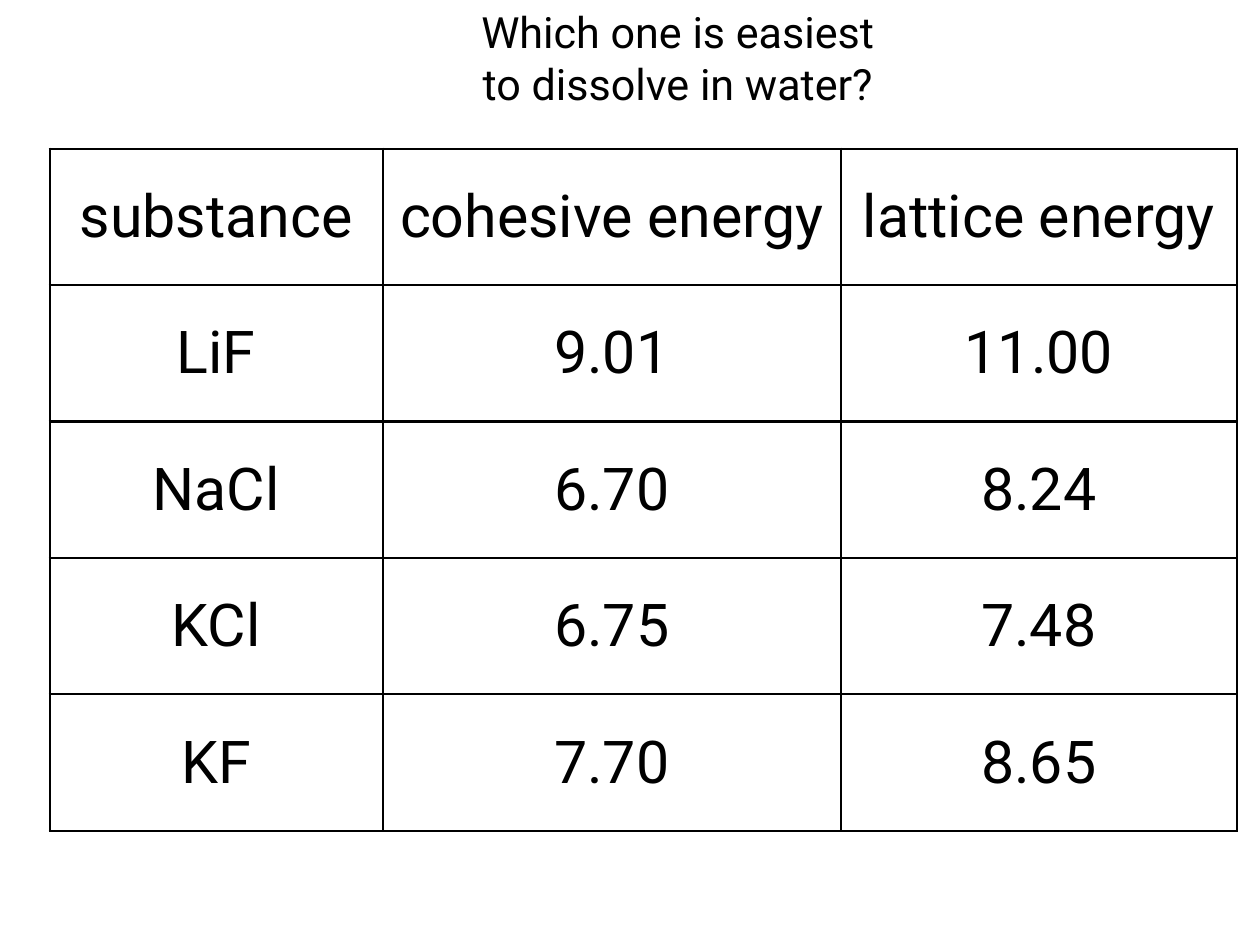
from pptx import Presentation
from pptx.dml.color import RGBColor
from pptx.enum import text
from pptx.oxml import parse_xml
from pptx.oxml.ns import nsdecls
from pptx.util import Inches, Pt

INK = "000000"
PAPER = "FFFFFF"


def color(value):
    return RGBColor.from_string(value)


def style(frame, size, spacing, inset):
    frame.word_wrap = True
    frame.margin_left = frame.margin_right = Inches(inset)
    frame.margin_top = frame.margin_bottom = Inches(inset)
    paragraph = frame.paragraphs[0]
    paragraph.alignment = text.PP_ALIGN.CENTER
    paragraph.line_spacing = Pt(spacing)
    font = paragraph.runs[0].font
    font.name = "Roboto"
    font.size = Pt(size)
    font.color.rgb = color(INK)


deck = Presentation()
deck.slide_width = Inches(14.22)
deck.slide_height = Inches(10.67)
slide = deck.slides.add_slide(deck.slide_layouts[6])
slide.background.fill.solid()
slide.background.fill.fore_color.rgb = color(PAPER)

# Energy table
energies = [
    ("substance", "cohesive energy", "lattice energy"),
    ("LiF", "9.01", "11.00"),
    ("NaCl", "6.70", "8.24"),
    ("KCl", "6.75", "7.48"),
    ("KF", "7.70", "8.65"),
]
column_widths = [3.76, 5.17, 4.47]
row_height = 1.54
energy_table = slide.shapes.add_table(
    len(energies), len(column_widths), Inches(0.56), Inches(1.68),
    Inches(sum(column_widths)), Inches(row_height * len(energies))).table
energy_table.first_row = False
energy_table.horz_banding = False
for column, width in zip(energy_table.columns, column_widths):
    column.width = Inches(width)

for r, substance in enumerate(energies):
    energy_table.rows[r].height = Inches(row_height)
    for c, value in enumerate(substance):
        cell = energy_table.cell(r, c)
        cell.text_frame.text = value
        style(cell.text_frame, 48, 57, 0.04)
        cell.vertical_anchor = text.MSO_ANCHOR.MIDDLE
        # Borders come before the fill in the cell properties
        properties = cell._tc.get_or_add_tcPr()
        for side in ("lnL", "lnR", "lnT", "lnB"):
            properties.append(parse_xml(
                f'<a:{side} {nsdecls("a")} w="{Pt(2)}"><a:solidFill>'
                f'<a:srgbClr val="{INK}"/></a:solidFill></a:{side}>'))
        cell.fill.background()

# Question above the table
question = slide.shapes.add_textbox(
    Inches(5.29), Inches(0), Inches(4.72), Inches(1.28)).text_frame
question.text = "Which one is easiest to dissolve in water?"
style(question, 35, 42, 0.06)
question.auto_size = text.MSO_AUTO_SIZE.SHAPE_TO_FIT_TEXT

deck.save("out.pptx")
